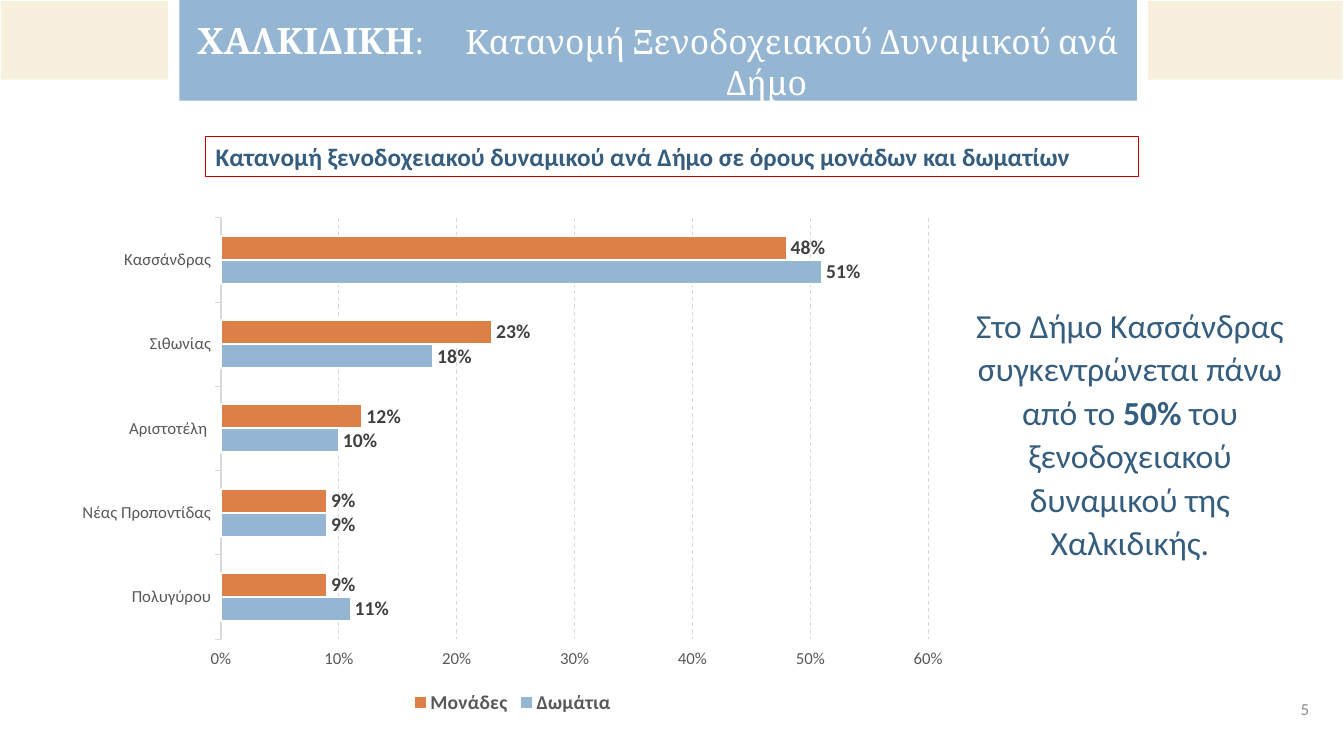
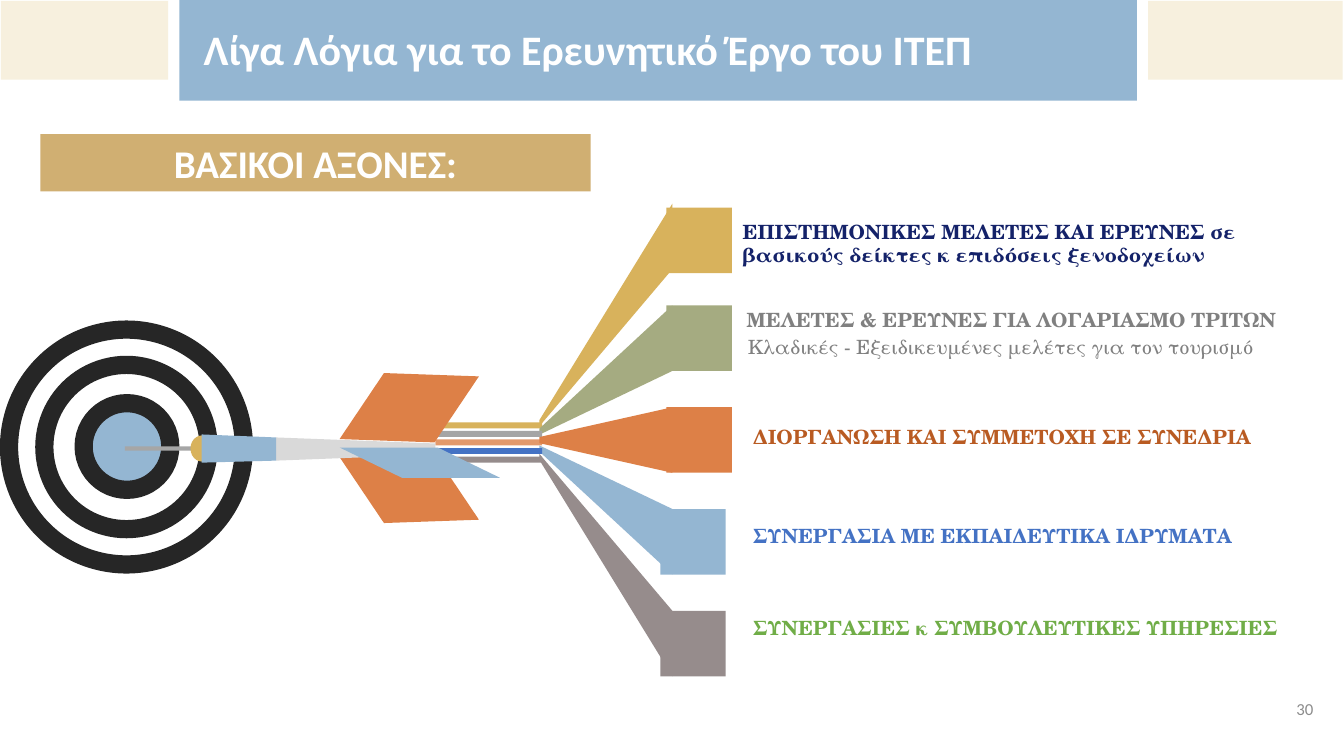
"""Build two slides on hotel capacity in Halkidiki and on the institute's research."""
from lxml.etree import SubElement
from pptx import Presentation
from pptx.chart.data import CategoryChartData
from pptx.dml.color import RGBColor
from pptx.enum.chart import XL_CHART_TYPE as CHART, XL_LEGEND_POSITION as LEGEND
from pptx.enum.chart import XL_LABEL_POSITION as LABEL, XL_TICK_MARK as TICK
from pptx.enum.dml import MSO_LINE as DASH
from pptx.enum.shapes import MSO_SHAPE as SHAPE
from pptx.enum.text import MSO_ANCHOR as ANCHOR, MSO_AUTO_SIZE as FIT, PP_ALIGN as ALIGN
from pptx.oxml.ns import qn
from pptx.util import Inches, Pt

CELL = Inches(0.1)
COLS, ROWS = 133.33, 75
C = {
    "white": "FFFFFF", "cream": "F7F0DE", "sky": "94B6D2", "navy": "355D7E",
    "ink": "142269", "sand": "D0AF72", "gold": "D8B25C", "sage": "A5AB81",
    "orange": "DD8047", "rust": "B95B22", "taupe": "968C8C", "blue": "4472C4",
    "green": "70AD47", "red": "C00000", "black": "262626", "label": "404040",
    "axis": "595959", "gray": "808080", "number": "8C8C8C", "shaft": "A5A5A5",
    "steel": "A6A6A6", "light": "D9D9D9",
}
SANS, SERIF, SCHOOL = "Calibri", "Cambria", "TeX Gyre Schola"


def rgb(name):
    return RGBColor.from_string(C[name])


def cells(*values):
    return [int(v * CELL) for v in values]


def style_font(font, size, color, name=SANS, bold=False):
    font.size, font.name, font.bold = Pt(size), name, bold
    font.color.rgb = rgb(color)


def write(sp, text, size=14, color="white", font=SANS, bold=False, align=ALIGN.LEFT,
          anchor=ANCHOR.TOP, spacing=None, fit=FIT.NONE, hanging=0):
    tf = sp.text_frame
    tf.word_wrap, tf.auto_size, tf.vertical_anchor = True, fit, anchor
    p = tf.paragraphs[0]
    p.alignment, p.line_spacing = align, spacing
    if hanging:
        indent = cells(hanging)[0]
        pPr = p._p.get_or_add_pPr()
        pPr.set("marL", str(indent))
        pPr.set("indent", str(-indent))
    runs = [(text, {})] if isinstance(text, str) else text
    for part, change in runs:
        r = p.add_run()
        r.text = part
        style_font(r.font, **{"size": size, "color": color, "name": font, "bold": bold, **change})


def paint(sp, fill=None, line=None, width=0.75, alpha=None):
    sp.shadow.inherit = False
    if fill:
        sp.fill.solid()
        sp.fill.fore_color.rgb = rgb(fill)
    else:
        sp.fill.background()
    if alpha:
        clr = sp.element.spPr.find(qn("a:solidFill")).find(qn("a:srgbClr"))
        SubElement(clr, qn("a:alpha")).set("val", str(alpha * 1000))
    if line:
        sp.line.color.rgb = rgb(line)
        sp.line.width = Pt(width)
    else:
        sp.line.fill.background()
    return sp


def shape(s, kind, box, adjust=(), flip=False, turn=0, **look):
    sp = s.shapes.add_shape(kind, *cells(*box))
    for i, value in enumerate(adjust):
        sp.adjustments[i] = value
    if flip:
        sp.element.spPr.find(qn("a:xfrm")).set("flipH", "1")
    sp.rotation = turn
    return paint(sp, **look)


def polygon(s, points, fill):
    first, *rest = [cells(*pt) for pt in points]
    builder = s.shapes.build_freeform(*first)
    builder.add_line_segments(rest, close=True)
    return paint(builder.convert_to_shape(), fill)


def textbox(s, box, text, **fmt):
    write(s.shapes.add_textbox(*cells(*box)), text, **fmt)


def add_bands(s):
    layout = s.slide_layout
    for box, fill in (((113.9, 0.1, 19.3, 7.8), "cream"), ((17.8, 0, 95, 10), "sky"),
                      ((0.1, 0.1, 16.6, 7.8), "cream")):
        layout.shapes.element.append(shape(s, SHAPE.RECTANGLE, box, fill=fill).element)


def new_slide(prs, number, box, title, **fmt):
    s = prs.slides.add_slide(prs.slide_layouts[5])
    sp = s.shapes.title
    sp.left, sp.top, sp.width, sp.height = cells(*box)
    write(sp, title, **fmt)
    textbox(s, (126.9, 68.3, 5.1, 4), number, size=12, color="number",
            align=ALIGN.CENTER, anchor=ANCHOR.MIDDLE)
    return s


def bar_chart(s, box, cats, series):
    data = CategoryChartData(number_format="0%")
    data.categories = cats
    for name, values, _ in series:
        data.add_series(name, values)
    chart = s.shapes.add_chart(CHART.BAR_CLUSTERED, *cells(*box), data).chart
    chart.has_title = False
    style_font(chart.font, 10, "axis")
    chart.has_legend = True
    chart.legend.position, chart.legend.include_in_layout = LEGEND.BOTTOM, False
    style_font(chart.legend.font, 14, "axis", bold=True)
    plot = chart.plots[0]
    plot.gap_width, plot.overlap, plot.vary_by_categories = 150, 0, False
    for ser, (_, _, color) in zip(plot.series, series):
        ser.format.fill.solid()
        ser.format.fill.fore_color.rgb = rgb(color)
        ser.format.line.color.rgb = rgb("white")
        ser.format.line.width = Pt(1.5)
        labels = ser.data_labels
        labels.show_value, labels.position = True, LABEL.OUTSIDE_END
        labels.number_format, labels.number_format_is_linked = "0%", False
        style_font(labels.font, 14, "label", bold=True)
    cat, val = chart.category_axis, chart.value_axis
    for axis in (cat, val):
        axis.major_tick_mark, axis.minor_tick_mark = TICK.OUTSIDE, TICK.NONE
        style_font(axis.tick_labels.font, 12, "axis")
    val.minimum_scale, val.maximum_scale, val.major_unit = 0, 0.6, 0.1
    val.tick_labels.number_format, val.tick_labels.number_format_is_linked = "0%", False
    val.format.line.fill.background()
    grid = val.major_gridlines.format.line
    for line in (cat.format.line, grid):
        line.color.rgb = rgb("light")
        line.width = Pt(0.75)
    grid.dash_style = DASH.DASH


def target(s):
    for x, y, size, fill in ((0.9, 32.7, 23.3, "white"), (4.4, 36.2, 16.3, "white"),
                             (8.3, 40, 8.6, "sky")):
        shape(s, SHAPE.OVAL, (x, y, size, size), fill=fill, line="black", width=13)


def dart(s):
    shape(s, SHAPE.RECTANGLE, (12.4, 44.3, 8, 0.4), fill="steel")
    for top, flip, turn in ((45.1, True, -2), (37.1, False, 2)):
        shape(s, SHAPE.PARALLELOGRAM, (33.8, top, 13.6, 6.7), (0.623,), flip, turn, fill="orange")
    polygon(s, ((27.4, 43.4), (43.2, 44), (43.2, 45.1), (27.4, 45.7)), "light")
    shape(s, SHAPE.CHORD, (18.9, 43.2, 2.3, 2.6), (53.912, 162), fill="gold")
    polygon(s, ((20, 43.1), (27.4, 43.4), (27.4, 45.7), (20, 45.9)), "sky")
    shape(s, SHAPE.PARALLELOGRAM, (33.7, 44.4, 15.9, 3), (2.059,), True, fill="sky")


def ribbons(s):
    axes = (("gold", "gold", 66.1, 0.4), ("sage", "shaft", 66.1, 0),
            ("orange", "orange", 66.1, 0), ("sky", "blue", 65.5, 0),
            ("taupe", "taupe", 65.5, 0))
    for i, (color, shaft, left, drop) in enumerate(axes):
        near, far, side = 41.7 + 0.83 * i, 20.2 + 10.1 * i, 6.5
        shape(s, SHAPE.RECTANGLE, (left, far + drop, side, side), fill=color)
        polygon(s, ((53.5, near), (66.7, far), (66.7, far + side), (53.5, near + 0.6)), color)
        shape(s, SHAPE.RECTANGLE, (43.2, 41.9 + 0.85 * i, 10.6, 0.6), fill=shaft,
              alpha=80 if color == "orange" else None)


def capacity_slide(prs):
    s = new_slide(prs, "5", (16.6, 1.3, 97.3, 5.4),
                  [("ΧΑΛΚΙΔΙΚΗ", {"size": 26, "bold": True}), (": \t", {"size": 26}),
                   ("Κατανομή Ξενοδοχειακού Δυναμικού ανά Δήμο", {})],
                  size=24, font=SERIF, align=ALIGN.CENTER, hanging=21.6)
    add_bands(s)
    bar_chart(s, (6.4, 20.6, 88.9, 50.7),
              ("Πολυγύρου", "Νέας Προποντίδας", "Αριστοτέλη ", "Σιθωνίας", "Κασσάνδρας"),
              (("Δωμάτια", (0.11, 0.09, 0.1, 0.18, 0.51), "sky"),
               ("Μονάδες", (0.09, 0.09, 0.12, 0.23, 0.48), "orange")))
    heading = shape(s, SHAPE.RECTANGLE, (20.4, 13.5, 92.5, 4), line="red")
    write(heading, "Κατανομή ξενοδοχειακού δυναμικού ανά Δήμο σε όρους μονάδων και δωματίων",
          size=18, color="navy", bold=True, fit=FIT.SHAPE_TO_FIT_TEXT)
    textbox(s, (95.3, 29.4, 33.6, 27),
            [("Στο Δήμο Κασσάνδρας συγκεντρώνεται πάνω από το ", {}), ("50%", {"bold": True}),
             (" του ξενοδοχειακού δυναμικού της Χαλκιδικής.", {})],
            size=24, color="navy", align=ALIGN.CENTER, spacing=1.08, fit=FIT.SHAPE_TO_FIT_TEXT)


def research_slide(prs):
    s = new_slide(prs, "30", (19.2, 0.5, 95, 9.3), "Λίγα Λόγια για το Ερευνητικό Έργο του ΙΤΕΠ",
                  size=30, bold=True, anchor=ANCHOR.MIDDLE, spacing=0.9)
    heading = shape(s, SHAPE.RECTANGLE, (4, 13.3, 54.6, 5.7), fill="sand")
    write(heading, "ΒΑΣΙΚΟΙ ΑΞΟΝΕΣ:", size=28, bold=True, align=ALIGN.CENTER,
          fit=FIT.SHAPE_TO_FIT_TEXT)
    for left, top, height, color, bold, text in (
            (72.7, 21.3, 5.7, "ink", True,
             "ΕΠΙΣΤΗΜΟΝΙΚΕΣ ΜΕΛΕΤΕΣ ΚΑΙ ΕΡΕΥΝΕΣ σε βασικούς δείκτες κ επιδόσεις ξενοδοχείων"),
            (73.1, 30.1, 3.4, "gray", True, "ΜΕΛΕΤΕΣ & ΕΡΕΥΝΕΣ ΓΙΑ ΛΟΓΑΡΙΑΣΜΟ ΤΡΙΤΩΝ"),
            (73.2, 32.7, 3.4, "gray", False, "Κλαδικές - Εξειδικευμένες μελέτες για τον τουρισμό"),
            (73.7, 41.7, 3.4, "rust", True, "ΔΙΟΡΓΑΝΩΣΗ ΚΑΙ ΣΥΜΜΕΤΟΧΗ ΣΕ ΣΥΝΕΔΡΙΑ"),
            (73.7, 51.5, 3.4, "blue", True, "ΣΥΝΕΡΓΑΣΙΑ ΜΕ ΕΚΠΑΙΔΕΥΤΙΚΑ ΙΔΡΥΜΑΤΑ"),
            (73.7, 60.6, 3.4, "green", True, "ΣΥΝΕΡΓΑΣΙΕΣ κ ΣΥΜΒΟΥΛΕΥΤΙΚΕΣ ΥΠΗΡΕΣΙΕΣ")):
        textbox(s, (left, top, 54.6, height), text, color=color, font=SCHOOL, bold=bold,
                fit=FIT.SHAPE_TO_FIT_TEXT)
    ribbons(s)
    target(s)
    dart(s)


def main():
    prs = Presentation()
    prs.slide_width, prs.slide_height = cells(COLS, ROWS)
    capacity_slide(prs)
    research_slide(prs)
    prs.save("out.pptx")


if __name__ == "__main__":
    main()
